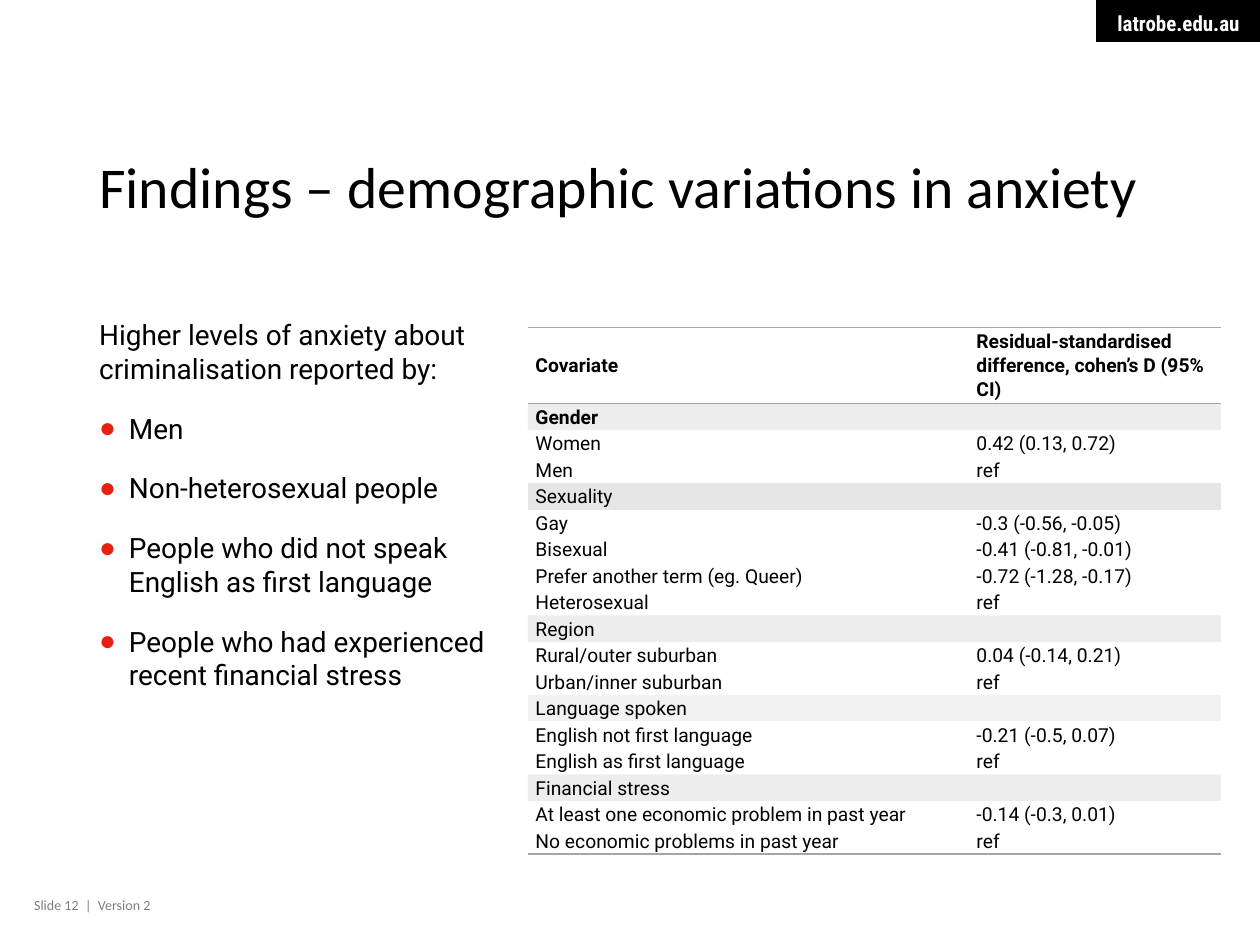
from lxml import etree
from pptx import Presentation
from pptx.dml.color import RGBColor
from pptx.enum.shapes import MSO_SHAPE
from pptx.enum.text import MSO_ANCHOR, MSO_AUTO_SIZE, PP_ALIGN
from pptx.oxml.ns import qn
from pptx.util import Pt

RECTANGLE = MSO_SHAPE.RECTANGLE
TOP, MIDDLE = MSO_ANCHOR.TOP, MSO_ANCHOR.MIDDLE
LEFT, RIGHT = PP_ALIGN.LEFT, PP_ALIGN.RIGHT
NO_AUTOFIT = MSO_AUTO_SIZE.NONE
PLAIN_TABLE_STYLE = "{2D5ABB26-0587-4C30-8999-92F81FD0307C}"

COLOURS = {
    "text": "000000",
    "tag": "000000",
    "tag_text": "FFFFFF",
    "footer": "7F7F7F",
    "bullet": "E52212",
    "rule": "A5A5A5",
    "band": "A5A5A5",
    "sexuality_band": "E7E6E6",
    "language_band": "F2F2F2",
}
BAND_OPACITY = 20

INTRO = "Higher levels of anxiety about criminalisation reported by:"
GROUPS = [
    "Men",
    "Non-heterosexual people",
    "People who did not speak English as first language",
    "People who had experienced recent financial stress",
]
HEADINGS = ("Covariate", "Residual-standardised difference, cohen’s D (95% CI)")
SECTIONS = [
    ("Gender", "band", [("Women", "0.42 (0.13, 0.72)"), ("Men", "ref")]),
    ("Sexuality", "sexuality_band", [
        ("Gay", "-0.3 (-0.56, -0.05)"),
        ("Bisexual", "-0.41 (-0.81, -0.01)"),
        ("Prefer another term (eg. Queer)", "-0.72 (-1.28, -0.17)"),
        ("Heterosexual", "ref"),
    ]),
    ("Region", "band", [
        ("Rural/outer suburban", "0.04 (-0.14, 0.21)"),
        ("Urban/inner suburban", "ref"),
    ]),
    ("Language spoken", "language_band", [
        ("English not first language", "-0.21 (-0.5, 0.07)"),
        ("English as first language", "ref"),
    ]),
    ("Financial stress", "band", [
        ("At least one economic problem in past year", "-0.14 (-0.3, 0.01)"),
        ("No economic problems in past year", "ref"),
    ]),
]


def rgb(name):
    return RGBColor.from_string(COLOURS[name])


def style(paragraph, face, size, colour="text", bold=False):
    font = paragraph.font
    font.name, font.size, font.bold = face, Pt(size), bold
    font.color.rgb = rgb(colour)


def place(shape, left, top, width, height):
    shape.left, shape.top = Pt(left), Pt(top)
    shape.width, shape.height = Pt(width), Pt(height)


def set_margins(target, left, top, right, bottom):
    target.margin_left, target.margin_top = Pt(left), Pt(top)
    target.margin_right, target.margin_bottom = Pt(right), Pt(bottom)


def set_bullet(paragraph, indent):
    """Give the paragraph a red dot, or no bullet when indent is 0."""
    properties = paragraph._p.get_or_add_pPr()
    properties.set("marL", str(Pt(indent)))
    properties.set("indent", str(-Pt(indent)))
    if indent:
        colour = etree.SubElement(properties, qn("a:buClr"))
        etree.SubElement(colour, qn("a:srgbClr"), val=COLOURS["bullet"])
        etree.SubElement(properties, qn("a:buChar"), char="●")
    else:
        etree.SubElement(properties, qn("a:buNone"))


def add_site_tag(slide):
    tag = slide.shapes.add_shape(RECTANGLE, Pt(626.4), 0, Pt(93.6), Pt(24))
    tag.shadow.inherit = False
    tag.fill.solid()
    tag.fill.fore_color.rgb = rgb("tag")
    tag.line.fill.background()
    frame = tag.text_frame
    frame.word_wrap = False
    frame.vertical_anchor = TOP
    set_margins(frame, 11.5, 5.75, 11.5, 3.6)
    label = frame.paragraphs[0]
    label.text = "latrobe.edu.au"
    label.alignment = RIGHT
    style(label, "Roboto Condensed", 12, "tag_text", True)


def add_footer(slide):
    footer = slide.shapes.add_textbox(Pt(19.5), Pt(509), Pt(193.5), Pt(17))
    frame = footer.text_frame
    frame.word_wrap = True
    set_margins(frame, 0, 3.6, 7.2, 3.6)
    note = frame.paragraphs[0]
    note.text = "Slide 12  |  Version 2"
    style(note, "Calibri", 8, "footer")


def fill_title(title):
    place(title, 49.5, 56, 621, 104.5)
    frame = title.text_frame
    frame.auto_size = NO_AUTOFIT
    frame.vertical_anchor = MIDDLE
    heading = frame.paragraphs[0]
    heading.text = "Findings – demographic variations in anxiety"
    heading.alignment = LEFT
    heading.line_spacing = 0.9
    style(heading, "Calibri", 33)


def fill_groups(body):
    place(body, 49.5, 178, 241, 188)
    frame = body.text_frame
    frame.auto_size = NO_AUTOFIT
    frame.vertical_anchor = TOP
    for index, text in enumerate([INTRO, *GROUPS]):
        item = frame.paragraphs[0] if index == 0 else frame.add_paragraph()
        item.text = text
        set_bullet(item, 17 if index else 0)
        item.space_before, item.space_after = Pt(0), Pt(15)
        style(item, "Roboto", 16)


def fill_cell(cell, text, bold=False):
    set_margins(cell, 4.3, 0, 4.3, 0)
    cell.vertical_anchor = MIDDLE
    entry = cell.text_frame.paragraphs[0]
    entry.text = text
    entry.line_spacing, entry.space_after = 1.07, Pt(8)
    style(entry, "Roboto", 11, bold=bold)


def add_rules(row, *sides):
    for cell in row.cells:
        for side in sides:
            line = etree.SubElement(cell._tc.get_or_add_tcPr(), qn(f"a:{side}"), w=str(Pt(1)))
            fill = etree.SubElement(line, qn("a:solidFill"))
            etree.SubElement(fill, qn("a:srgbClr"), val=COLOURS["rule"])


def fill_band(cell, colour):
    cell.fill.solid()
    cell.fill.fore_color.rgb = rgb(colour)
    if colour == "band":
        shade = cell._tc.tcPr.find(f".//{qn('a:srgbClr')}")
        etree.SubElement(shade, qn("a:alpha"), val=str(BAND_OPACITY * 1000))


def add_covariate_table(slide):
    rows = [(HEADINGS, None)]
    for section, colour, covariates in SECTIONS:
        rows.append(((section,), colour))
        rows += [(covariate, None) for covariate in covariates]

    frame = slide.shapes.add_table(len(rows), 2, Pt(301.7), Pt(187), Pt(396), Pt(301))
    table = frame.table
    table.first_row = table.horz_banding = False
    table._tbl.tblPr.find(qn("a:tableStyleId")).text = PLAIN_TABLE_STYLE
    for column, width in zip(table.columns, (252, 144)):
        column.width = Pt(width)
    for row in table.rows:
        row.height = Pt(15.15)
    table.rows[0].height = Pt(43.6)
    add_rules(table.rows[0], "lnT", "lnB")
    add_rules(table.rows[len(rows) - 1], "lnB")

    for index, (texts, band) in enumerate(rows):
        cells = list(table.rows[index].cells)
        if band:
            cells[0].merge(cells[1])
        for cell, text in zip(cells, texts):
            fill_cell(cell, text, bold=index < 2)
        for cell in cells:
            if band:
                fill_band(cell, band)
            else:
                cell.fill.background()


def main():
    presentation = Presentation()
    presentation.slide_width, presentation.slide_height = Pt(720), Pt(540)
    slide = presentation.slides.add_slide(presentation.slide_layouts[1])
    add_site_tag(slide)
    add_footer(slide)
    fill_title(slide.shapes.title)
    fill_groups(slide.placeholders[1])
    add_covariate_table(slide)
    presentation.save("out.pptx")


if __name__ == "__main__":
    main()
